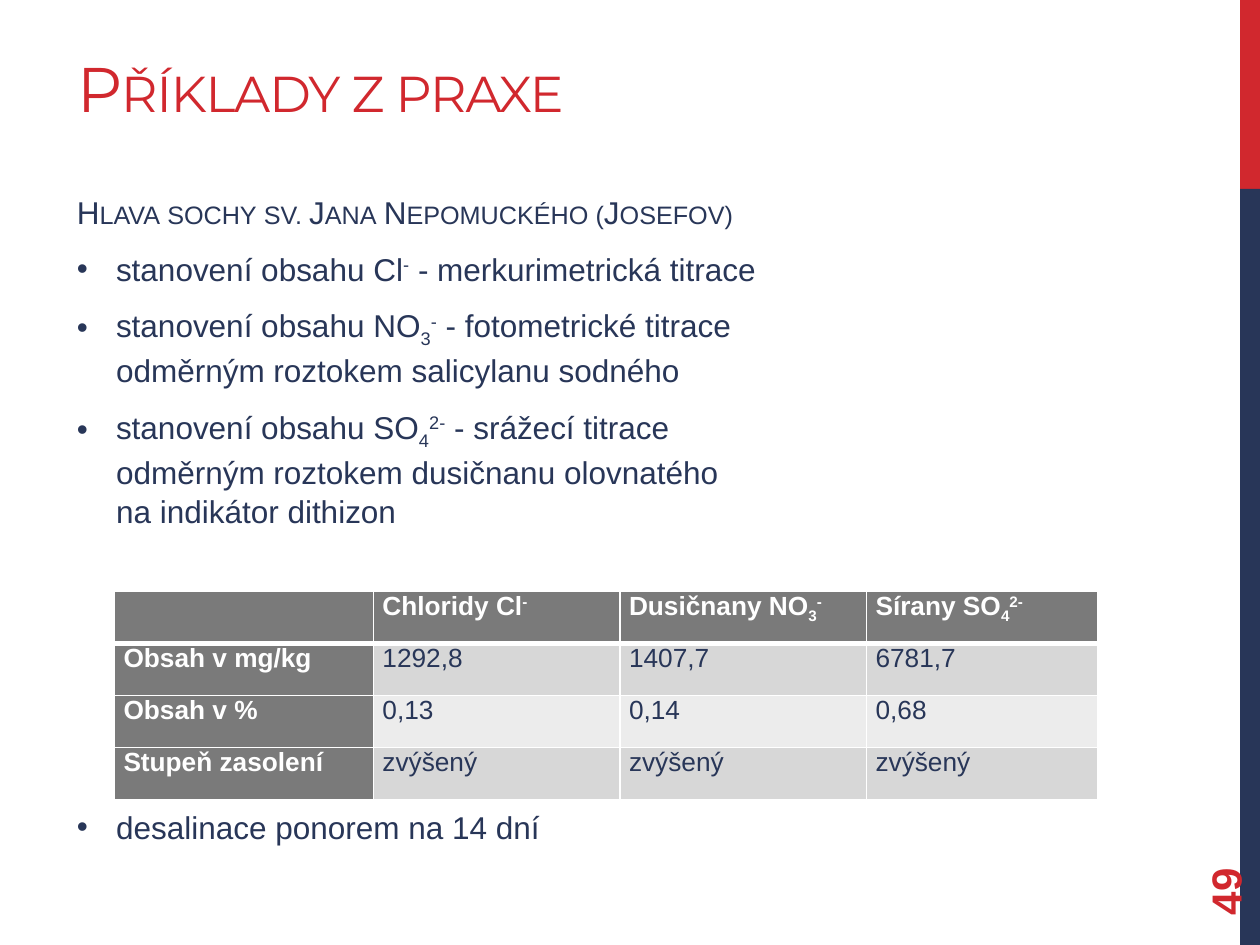
from lxml.etree import SubElement
from pptx import Presentation
from pptx.dml.color import RGBColor
from pptx.enum.shapes import MSO_SHAPE
from pptx.enum.text import MSO_ANCHOR, PP_ALIGN
from pptx.oxml.ns import qn
from pptx.util import Cm, Pt

RED, NAVY, WHITE = "D1282E", "283658", "FFFFFF"
HEADER_GRAY, BAND_DARK, BAND_LIGHT = "7A7A7A", "D7D7D7", "ECECEC"
BASELINES = {"_": "-25000", "^": "30000"}

# In these texts "|" separates runs; a run led by _ is lowered, by ^ raised
HEADING = "Hlava sochy sv. Jana Nepomuckého (Josefov)"
ANALYSES = [
    "stanovení obsahu Cl|^-| - merkurimetrická titrace",
    "stanovení obsahu NO|_3|^-| - fotometrické titrace odměrným roztokem salicylanu sodného",
    "stanovení obsahu SO|_4|^2-| - srážecí titrace odměrným roztokem dusičnanu olovnatého "
    "na indikátor dithizon",
]
TREATMENT = "desalinace ponorem na 14 dní"
SALT_ROWS = [
    ["", "Chloridy Cl|^-", "Dusičnany NO|_3|^-", "Sírany SO|_4|^2-"],
    ["Obsah v mg/kg", "1292,8", "1407,7", "6781,7"],
    ["Obsah v %", "0,13", "0,14", "0,68"],
    ["Stupeň zasolení", "zvýšený", "zvýšený", "zvýšený"],
]


def rgb(value):
    return RGBColor.from_string(value)


def style_run(run, size, color, font="Arial", bold=False, small_caps=False):
    run.font.name = font
    run.font.size = Pt(size)
    run.font.bold = bold
    run.font.color.rgb = rgb(color)
    if small_caps:
        run.font._element.set("cap", "small")


def write_runs(paragraph, marked_text, size, color, **style):
    for piece in marked_text.split("|"):
        run = paragraph.add_run()
        run.text = piece.lstrip("_^")
        style_run(run, size, color, **style)
        if piece[:1] in BASELINES:
            run.font._element.set("baseline", BASELINES[piece[0]])


def add_bar(slide, top, height, color):
    bar = slide.shapes.add_shape(MSO_SHAPE.RECTANGLE, Cm(25), top, Cm(0.4), height)
    bar.shadow.inherit = False
    bar.fill.solid()
    bar.fill.fore_color.rgb = rgb(color)
    bar.line.fill.background()


def set_title(slide, text):
    title = slide.shapes.title
    title.left, title.top, title.width, title.height = Cm(1.3), Cm(0.74), Cm(17.2), Cm(1.9)
    frame = title.text_frame
    frame.text = text
    frame.vertical_anchor = MSO_ANCHOR.BOTTOM
    paragraph = frame.paragraphs[0]
    paragraph.alignment = PP_ALIGN.LEFT
    style_run(paragraph.runs[0], 36, RED, font="Montserrat", small_caps=True)
    paragraph.runs[0].font._element.set("spc", "-60")


def add_text_box(slide, left, top, width, height):
    box = slide.shapes.add_textbox(left, top, width, height)
    box.text_frame.word_wrap = True
    return box


def space_paragraph(paragraph):
    paragraph.line_spacing = 1.05
    paragraph.space_before = Pt(3.6)
    paragraph.space_after = Pt(6)


def write_bullet(paragraph, marked_text):
    space_paragraph(paragraph)
    properties = paragraph._p.get_or_add_pPr()
    properties.set("marL", str(Cm(0.79)))
    properties.set("indent", str(-Cm(0.79)))
    SubElement(properties, qn("a:buFont")).set("typeface", "Arial")
    SubElement(properties, qn("a:buChar")).set("char", "•")
    write_runs(paragraph, marked_text, 18, NAVY)


def add_analyses(slide):
    frame = add_text_box(slide, Cm(1.3), Cm(3.73), Cm(14.2), Cm(10)).text_frame
    heading = frame.paragraphs[0]
    space_paragraph(heading)
    write_runs(heading, HEADING, 18, NAVY, small_caps=True)
    for analysis in ANALYSES:
        write_bullet(frame.add_paragraph(), analysis)


def add_treatment(slide):
    frame = add_text_box(slide, Cm(1.3), Cm(16.13), Cm(14.2), Cm(1.1)).text_frame
    write_bullet(frame.paragraphs[0], TREATMENT)


def set_borders(cell, bottom_width):
    properties = cell._tc.get_or_add_tcPr()
    for side, width in (("L", 1), ("R", 1), ("T", 1), ("B", bottom_width)):
        border = SubElement(properties, qn(f"a:ln{side}"), w=str(Pt(width)))
        fill = SubElement(border, qn("a:solidFill"))
        SubElement(fill, qn("a:srgbClr"), val=WHITE)


def format_cell(cell, marked_text, row, column):
    is_header = row == 0 or column == 0
    band = BAND_DARK if row % 2 else BAND_LIGHT
    set_borders(cell, 3 if row == 0 else 1)
    cell.fill.solid()
    cell.fill.fore_color.rgb = rgb(HEADER_GRAY if is_header else band)
    cell.margin_left = cell.margin_right = Cm(0.18)
    cell.margin_top = cell.margin_bottom = 0
    if marked_text:
        paragraph = cell.text_frame.paragraphs[0]
        paragraph.alignment = PP_ALIGN.JUSTIFY
        write_runs(paragraph, marked_text, 15, WHITE if is_header else NAVY, bold=is_header)


def add_salt_table(slide):
    widths = [Cm(5.22), Cm(4.97), Cm(4.97), Cm(4.65)]
    table = slide.shapes.add_table(
        len(SALT_ROWS), len(widths), Cm(2.31), Cm(11.92), sum(widths), Cm(4.2)
    ).table
    for column, width in zip(table.columns, widths):
        column.width = width
    for r, texts in enumerate(SALT_ROWS):
        for c, text in enumerate(texts):
            format_cell(table.cell(r, c), text, r, c)


def add_page_number(slide, number):
    box = add_text_box(slide, Cm(22.86), Cm(16.36), Cm(3.66), Cm(1.02))
    box.rotation = 270
    frame = box.text_frame
    frame.vertical_anchor = MSO_ANCHOR.MIDDLE
    frame.text = number
    style_run(frame.paragraphs[0].runs[0], 24, RED, bold=True)


def main():
    presentation = Presentation()
    presentation.slide_width, presentation.slide_height = Cm(25.4), Cm(19.05)
    slide = presentation.slides.add_slide(presentation.slide_layouts[5])

    # Side stripe
    add_bar(slide, 0, Cm(3.81), RED)
    add_bar(slide, Cm(3.81), Cm(15.24), NAVY)

    # Title and text
    set_title(slide, "Příklady z praxe")
    add_analyses(slide)
    add_treatment(slide)

    # Results and page number
    add_salt_table(slide)
    add_page_number(slide, "49")

    presentation.save("out.pptx")


if __name__ == "__main__":
    main()
